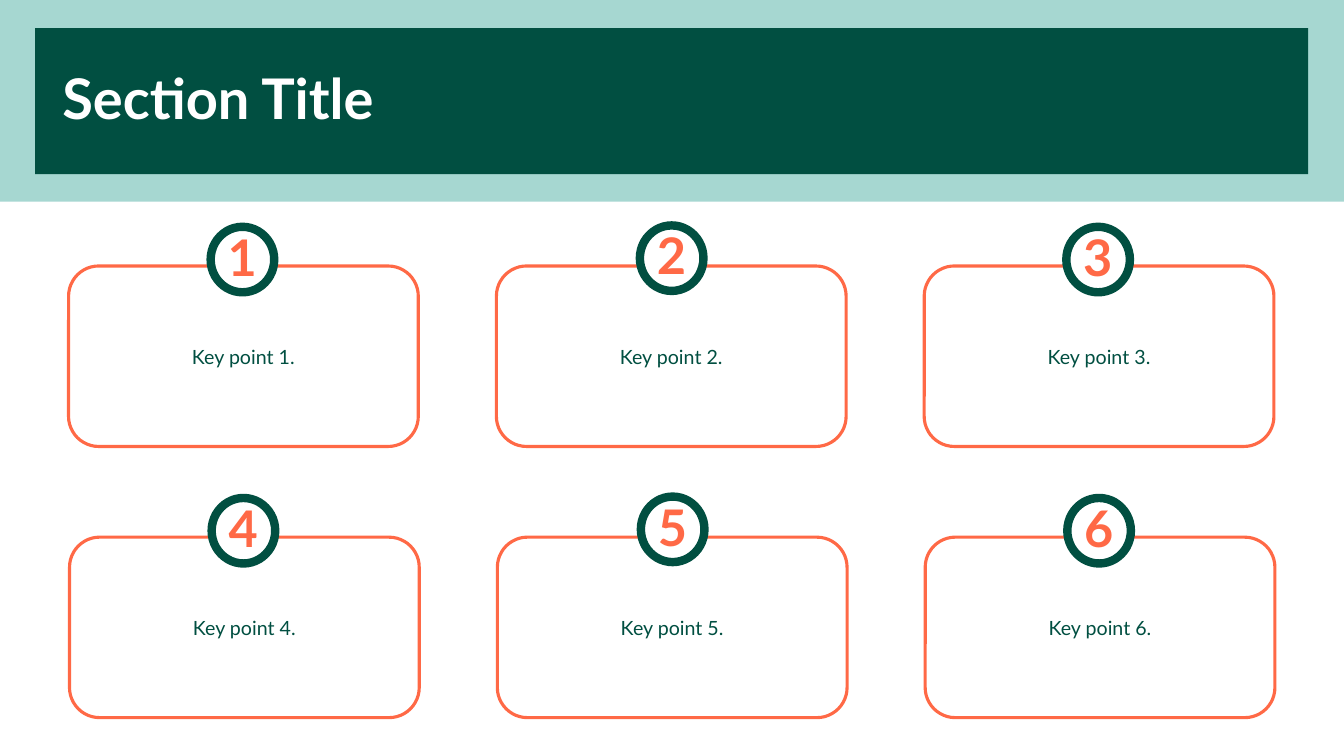
from pptx import Presentation
from pptx.dml.color import RGBColor
from pptx.enum import shapes, text
from pptx.util import Pt

MINT = RGBColor(0xA6, 0xD7, 0xD1)
GREEN = RGBColor(0x01, 0x4F, 0x41)
ORANGE = RGBColor(0xFF, 0x69, 0x46)
WHITE = RGBColor(0xFF, 0xFF, 0xFF)

COLUMNS = 3
CARD_LEFT, CARD_TOP = 49, 190
COLUMN_STEP, ROW_STEP = 305.6, 193.7
ROW_SHIFT = 0.7
CARD_WIDTH, CARD_HEIGHT = 249.8, 128.9


def add_panel(slide, kind, left, top, width, height, fill, line=None, weight=0):
    panel = slide.shapes.add_shape(kind, Pt(left), Pt(top), Pt(width), Pt(height))
    panel.shadow.inherit = False
    panel.fill.solid()
    panel.fill.fore_color.rgb = fill
    if line is None:
        panel.line.fill.background()
    else:
        panel.line.color.rgb = line
        panel.line.width = Pt(weight)
    return panel


def write(holder, words, size, color, bold=False, align=text.PP_ALIGN.CENTER,
          anchor=text.MSO_ANCHOR.MIDDLE, spacing=None, before=None):
    frame = holder.text_frame
    frame.word_wrap = True
    frame.vertical_anchor = anchor
    paragraph = frame.paragraphs[0]
    paragraph.text = words
    paragraph.alignment = align
    paragraph.line_spacing = spacing
    paragraph.space_before = before
    paragraph.font.name = "Lato"
    paragraph.font.size = Pt(size)
    paragraph.font.bold = bold
    paragraph.font.color.rgb = color


def add_label(slide, left, top, width, height, words, size, color, **style):
    label = slide.shapes.add_textbox(Pt(left), Pt(top), Pt(width), Pt(height))
    write(label, words, size, color, bold=True, spacing=0.9, **style)


def add_header(slide, title):
    rectangle = shapes.MSO_SHAPE.RECTANGLE
    add_panel(slide, rectangle, 0, 0, 960, 144, MINT)
    add_panel(slide, rectangle, 25, 20, 909.5, 104.4, GREEN)
    add_label(slide, 37.5, 20, 897, 104.4, title, 40, WHITE,
              align=text.PP_ALIGN.LEFT)


def add_key_point(slide, number):
    row, column = divmod(number - 1, COLUMNS)
    left = CARD_LEFT + column * COLUMN_STEP + row * ROW_SHIFT
    top = CARD_TOP + row * ROW_STEP
    nudge = 1 if column == 1 else 0

    card = add_panel(slide, shapes.MSO_SHAPE.ROUNDED_RECTANGLE, left, top,
                     CARD_WIDTH, CARD_HEIGHT, WHITE, ORANGE, 2.25)
    write(card, f"Key point {number}.", 14, GREEN, before=Pt(10))
    add_panel(slide, shapes.MSO_SHAPE.OVAL, left + 101.5 + nudge, top - 28 - nudge,
              45.4, 46.8, WHITE, GREEN, 6)
    add_label(slide, left - 0.5 + nudge, top - 27.3 - nudge, 249, 45.4,
              str(number), 36, ORANGE, anchor=text.MSO_ANCHOR.TOP, before=Pt(10))


def main():
    deck = Presentation()
    deck.slide_width, deck.slide_height = Pt(960), Pt(540)
    slide = deck.slides.add_slide(deck.slide_layouts[6])
    add_header(slide, "Section Title")
    for number in range(1, 7):
        add_key_point(slide, number)
    deck.save("out.pptx")


if __name__ == "__main__":
    main()
